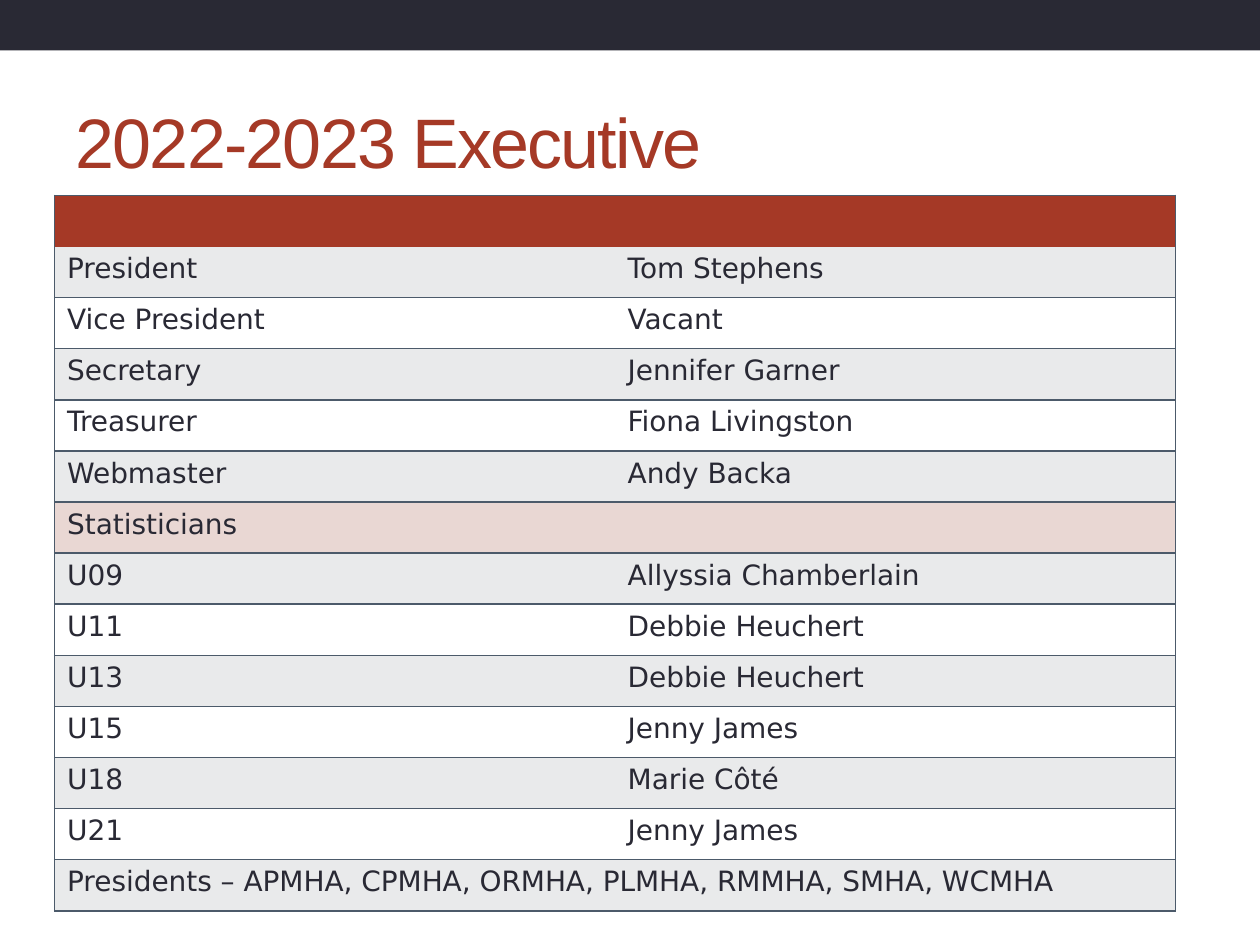
from lxml.etree import SubElement
from pptx import Presentation
from pptx.dml.color import RGBColor
from pptx.enum.shapes import MSO_SHAPE
from pptx.enum.text import MSO_ANCHOR, PP_ALIGN
from pptx.oxml import parse_xml
from pptx.oxml.ns import nsdecls, qn
from pptx.util import Cm, Pt

DARK, RED, PINK = "292934", "A53926", "E9D7D3"
GREY, WHITE, LINE = "E9EAEB", "FFFFFF", "4C5A6A"

ROWS = [
    ("", ""),
    ("President", "Tom Stephens"),
    ("Vice President", "Vacant"),
    ("Secretary", "Jennifer Garner"),
    ("Treasurer", "Fiona Livingston"),
    ("Webmaster", "Andy Backa"),
    ("Statisticians",),
    ("U09", "Allyssia Chamberlain"),
    ("U11", "Debbie Heuchert"),
    ("U13", "Debbie Heuchert"),
    ("U15", "Jenny James"),
    ("U18", "Marie Côté"),
    ("U21", "Jenny James"),
    ("Presidents – APMHA, CPMHA, ORMHA, PLMHA, RMMHA, SMHA, WCMHA",),
]


def paint(fill, color):
    fill.solid()
    fill.fore_color.rgb = RGBColor.from_string(color)


def style(para, face, size, color):
    para.font.name = face
    para.font.size = Pt(size)
    para.font.color.rgb = RGBColor.from_string(color)


def add_band(slide, width):
    band = slide.shapes.add_shape(MSO_SHAPE.RECTANGLE, 0, 0, width, Cm(1.02))
    band.shadow.inherit = False
    paint(band.fill, DARK)
    band.line.fill.background()


def set_title(slide, text):
    title = slide.shapes.title
    title.left, title.top = Cm(1.27), Cm(1.47)
    title.width, title.height = Cm(22.86), Cm(2.74)
    frame = title.text_frame
    frame.vertical_anchor = MSO_ANCHOR.MIDDLE
    para = frame.paragraphs[0]
    run = para.add_run()
    run.text = text
    para.alignment = PP_ALIGN.LEFT
    style(para, "Arial", 40, RED)
    run.font._element.set("spc", "-100")


def set_edges(cell, shown):
    """Draw the sides named in shown (of L, R, T, B) and clear the others."""
    props = cell._tc.get_or_add_tcPr()
    for place, side in enumerate("LRTB"):
        edge = parse_xml(f'<a:ln{side} {nsdecls("a")} w="{Pt(1)}"/>')
        if side in shown:
            solid = SubElement(edge, qn("a:solidFill"))
            SubElement(solid, qn("a:srgbClr"), val=LINE)
        else:
            SubElement(edge, qn("a:noFill"))
        props.insert(place, edge)


def row_color(index):
    if index == 0:
        return RED
    if ROWS[index][0] == "Statisticians":
        return PINK
    return GREY if index % 2 else WHITE


def row_edges(index):
    """The header and the first row meet without a line."""
    return {0: "T", 1: "B"}.get(index, "TB")


def add_roster(slide):
    high = Cm(1.03)
    table = slide.shapes.add_table(
        len(ROWS), 2, Cm(1.1), Cm(3.94), Cm(22.6), high * len(ROWS)
    ).table
    for index, texts in enumerate(ROWS):
        table.rows[index].height = high
        cells = [table.cell(index, col) for col in range(2)]
        if len(texts) == 1:
            cells[0].merge(cells[1])
        for cell, side in zip(cells, "LR"):
            paint(cell.fill, row_color(index))
            ends = "LR" if len(texts) == 1 else side
            set_edges(cell, ends + row_edges(index))
        for cell, text in zip(cells, texts):
            cell.text = text
            para = cell.text_frame.paragraphs[0]
            style(para, "DejaVu Sans", 16, DARK)
            para.font.bold = False


def main():
    deck = Presentation()
    deck.slide_width, deck.slide_height = Cm(25.4), Cm(19.05)
    slide = deck.slides.add_slide(deck.slide_layouts[5])
    add_band(slide, deck.slide_width)
    set_title(slide, "2022-2023 Executive")
    add_roster(slide)
    deck.save("out.pptx")


if __name__ == "__main__":
    main()
